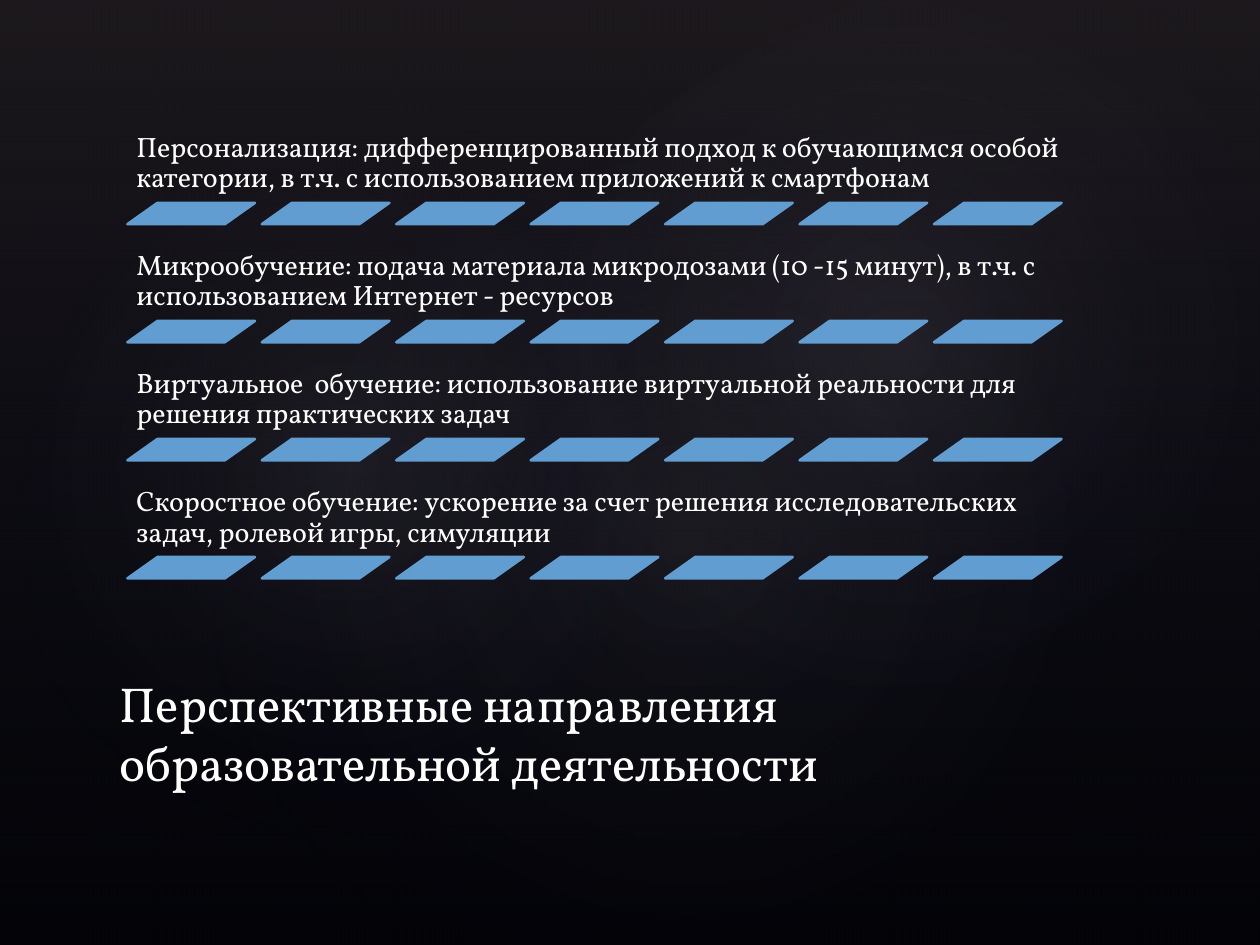
from dataclasses import dataclass

from lxml import etree
from pptx import Presentation
from pptx import util as u
from pptx.dml.color import RGBColor
from pptx.enum import shapes, text
from pptx.oxml import ns
from pptx.shapes.autoshape import Shape
from pptx.slide import Slide

BLACK = RGBColor(0x00, 0x00, 0x00)
WHITE = RGBColor(0xFF, 0xFF, 0xFF)
BLUE = RGBColor(0x62, 0x9D, 0xD1)
NAVY = RGBColor(0x24, 0x28, 0x52)
TAUPE = RGBColor(0x50, 0x46, 0x52)
LILAC = RGBColor(0xC4, 0xBC, 0xC6)

FONT = "Vollkorn"
LEFT, FIRST_TOP, ROW_PITCH = 2.57, 2.34, 2.38
TEXT_WIDTH, TEXT_HEIGHT = 19.23, 1.75
STRIPE_COUNT, STRIPE_PITCH = 7, 2.71
STRIPE_WIDTH, STRIPE_HEIGHT = 2.57, 0.43

DIRECTIONS = [
    "Персонализация: дифференцированный подход к обучающимся особой категории, "
    "в т.ч. с использованием приложений к смартфонам",
    "Микрообучение: подача материала микродозами (10 -15 минут), "
    "в т.ч. с использованием Интернет - ресурсов",
    "Виртуальное  обучение: использование виртуальной реальности для решения практических задач",
    "Скоростное обучение: ускорение за счет решения исследовательских задач, "
    "ролевой игры, симуляции",
]
TITLE = "Перспективные направления образовательной деятельности"


@dataclass(frozen=True)
class Box:
    """Left, top, width and height in centimetres."""

    left: float
    top: float
    width: float
    height: float

    def lengths(self) -> list[u.Length]:
        return [u.Cm(value) for value in (self.left, self.top, self.width, self.height)]


@dataclass(frozen=True)
class Stop:
    position: int
    color: RGBColor
    opacity: int


@dataclass(frozen=True)
class Glow:
    box: Box
    rotation: float
    opacity: int


GLOWS = [
    Glow(Box(3.81, 2.9, 20.12, 15.85), 328.7, 7),
    Glow(Box(-0.76, 3.25, 15.39, 12.45), 294.3, 8),
    Glow(Box(9.09, 0.33, 18.01, 13.21), 328.7, 8),
]


def add_shape(slide: Slide, kind: shapes.MSO_SHAPE, box: Box) -> Shape:
    shape = slide.shapes.add_shape(kind, *box.lengths())
    shape.shadow.inherit = False
    return shape


def fill_gradient(shape: Shape, stops: list[Stop], direction: str) -> None:
    """Give the shape a borderless gradient whose stops have their own opacity."""
    shape.line.fill.background()
    stop_xml = "".join(
        f'<a:gs pos="{stop.position * 1000}"><a:srgbClr val="{stop.color}">'
        f'<a:alpha val="{stop.opacity * 1000}"/></a:srgbClr></a:gs>'
        for stop in stops
    )
    gradient = etree.fromstring(
        f'<a:gradFill {ns.nsdecls("a")} rotWithShape="1">'
        f"<a:gsLst>{stop_xml}</a:gsLst>{direction}</a:gradFill>"
    )
    shape.element.spPr.find(ns.qn("a:prstGeom")).addnext(gradient)


def add_backdrop(slide: Slide) -> None:
    background = slide.background.fill
    background.solid()
    background.fore_color.rgb = BLACK
    veil = add_shape(slide, shapes.MSO_SHAPE.RECTANGLE, Box(0, 0, 25.4, 19.05))
    fill_gradient(veil, [Stop(0, TAUPE, 36), Stop(100, NAVY, 10)],
                  '<a:lin ang="5400000" scaled="0"/>')
    for glow in GLOWS:
        ellipse = add_shape(slide, shapes.MSO_SHAPE.OVAL, glow.box)
        ellipse.rotation = glow.rotation
        fill_gradient(
            ellipse,
            [Stop(0, LILAC, glow.opacity), Stop(58, NAVY, 0)],
            '<a:path path="circle">'
            '<a:fillToRect l="50000" t="50000" r="50000" b="50000"/></a:path>',
        )


def add_text(slide: Slide, box: Box, content: str, size: int,
             line_spacing: float, frame_format: dict[str, object]) -> None:
    frame = slide.shapes.add_textbox(*box.lengths()).text_frame
    frame.word_wrap = True
    frame.vertical_anchor = text.MSO_ANCHOR.BOTTOM
    for name, value in frame_format.items():
        setattr(frame, name, value)
    paragraph = frame.paragraphs[0]
    paragraph.line_spacing = line_spacing
    run = paragraph.add_run()
    run.text = content
    for name, value in {"name": FONT, "size": u.Pt(size)}.items():
        setattr(run.font, name, value)
    run.font.color.rgb = WHITE


def add_stripes(slide: Slide, top: float) -> None:
    for column in range(STRIPE_COUNT):
        box = Box(LEFT + column * STRIPE_PITCH, top, STRIPE_WIDTH, STRIPE_HEIGHT)
        stripe = add_shape(slide, shapes.MSO_SHAPE.PARALLELOGRAM, box)
        stripe.adjustments[0] = 1.41
        stripe.fill.solid()
        stripe.fill.fore_color.rgb = BLUE
        stripe.line.color.rgb = BLUE
        stripe.line.width = u.Pt(1.5)


def main() -> None:
    presentation = Presentation()
    presentation.slide_width, presentation.slide_height = u.Cm(25.4), u.Cm(19.05)
    slide = presentation.slides.add_slide(presentation.slide_layouts[6])

    add_backdrop(slide)
    margins = {f"margin_{side}": u.Cm(0.18) for side in ("left", "top", "right", "bottom")}
    for row, direction in enumerate(DIRECTIONS):
        top = FIRST_TOP + row * ROW_PITCH
        add_text(slide, Box(LEFT, top, TEXT_WIDTH, TEXT_HEIGHT), direction, 16, 0.9, margins)
        add_stripes(slide, top + TEXT_HEIGHT)
    add_text(slide, Box(2.16, 13.54, 20.96, 2.54), TITLE, 28, 1.0, {})

    presentation.save("out.pptx")


if __name__ == "__main__":
    main()
